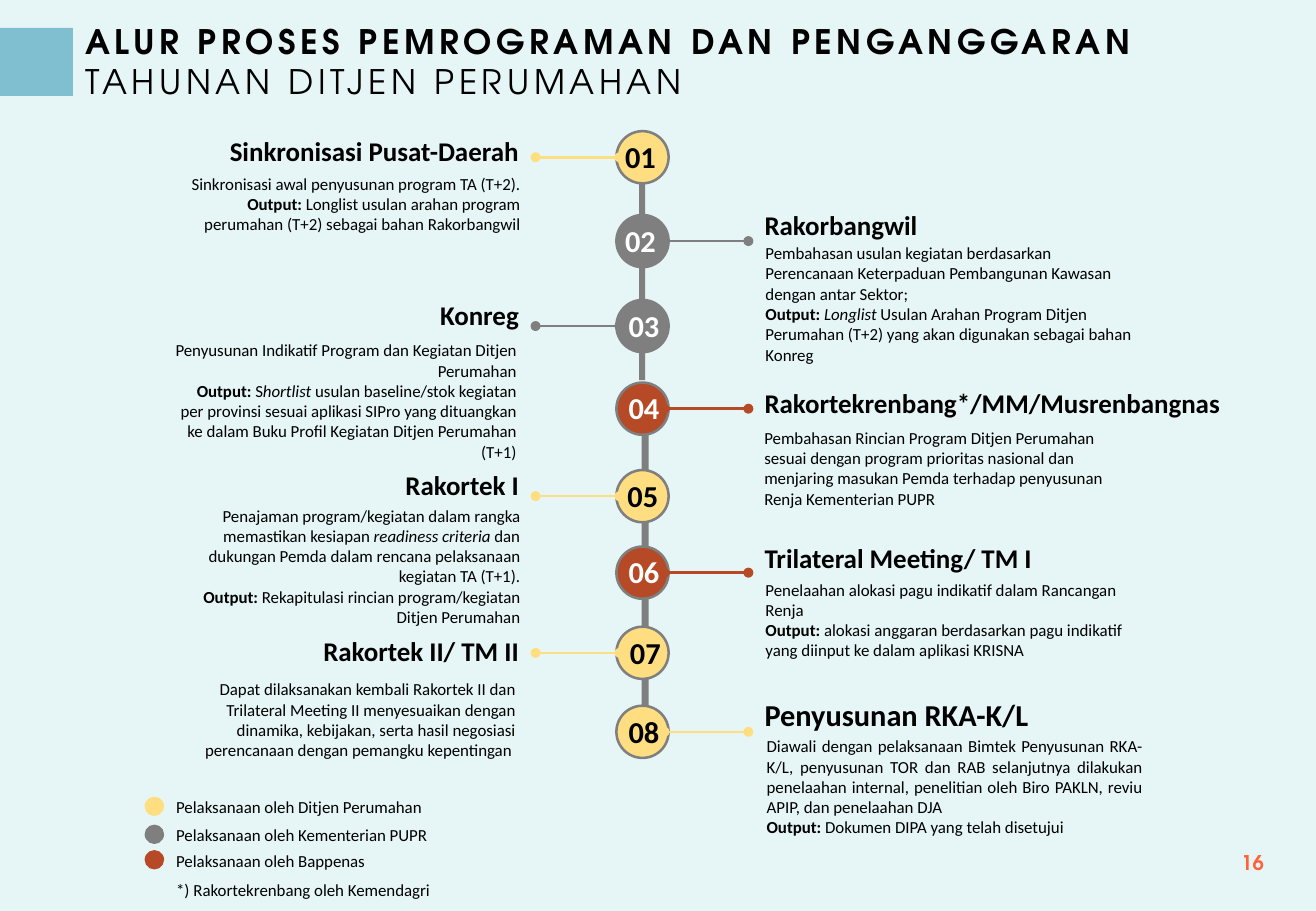
from lxml import etree
from pptx import Presentation
from pptx.dml.color import RGBColor
from pptx.enum.shapes import MSO_CONNECTOR, MSO_SHAPE
from pptx.enum.text import MSO_ANCHOR, MSO_AUTO_SIZE, PP_ALIGN
from pptx.oxml.ns import qn
from pptx.util import Inches, Pt

LEFT, RIGHT, CENTER, JUSTIFY = PP_ALIGN.LEFT, PP_ALIGN.RIGHT, PP_ALIGN.CENTER, PP_ALIGN.JUSTIFY
TOP, MIDDLE, BOTTOM = MSO_ANCHOR.TOP, MSO_ANCHOR.MIDDLE, MSO_ANCHOR.BOTTOM
RECT, OVAL = MSO_SHAPE.RECTANGLE, MSO_SHAPE.OVAL
FIT, NO_FIT = MSO_AUTO_SIZE.SHAPE_TO_FIT_TEXT, MSO_AUTO_SIZE.NONE
STRAIGHT = MSO_CONNECTOR.STRAIGHT

# Content: a paragraph is a list of (text, style) runs, style "b", "i" or ""
YELLOW, GREY, RED = "FFDE81", "7F7F7F", "B64926"
BLACK, WHITE, BLUE, ORANGE, PALE = "000000", "FFFFFF", "80BFD0", "FF6238", "E6F5F6"
BODY_FONT, TITLE_FONT = "Calibri", "TeX Gyre Adventor"
OUTPUT = ("Output: ", "b")

TITLE = [[("ALUR PROSES PEMROGRAMAN DAN PENGANGGARAN ", "b"), ("TAHUNAN DITJEN PERUMAHAN", "")]]
PAGE = "16"

# Steps: heading, heading size, body alignment, colour, body lines, body.
# Odd and last-but-one positions follow the layout table below.
STEPS = [
    ("Sinkronisasi Pusat-Daerah", 16, RIGHT, YELLOW, 3, [
        [("Sinkronisasi awal penyusunan program TA (T+2).", "")],
        [OUTPUT, ("Longlist usulan arahan program perumahan (T+2) sebagai bahan Rakorbangwil", "")]]),
    ("Rakorbangwil", 16, LEFT, GREY, 6, [
        [("Pembahasan usulan kegiatan berdasarkan Perencanaan Keterpaduan Pembangunan "
          "Kawasan dengan antar Sektor;", "")],
        [OUTPUT, ("Longlist", "i"), (" Usulan Arahan Program Ditjen Perumahan (T+2) yang akan "
                                     "digunakan sebagai bahan Konreg", "")]]),
    ("Konreg", 16, RIGHT, GREY, 6, [
        [("Penyusunan Indikatif Program dan Kegiatan Ditjen Perumahan", "")],
        [OUTPUT, ("S", ""), ("hortlist ", "i"),
         ("usulan baseline/stok kegiatan per provinsi sesuai aplikasi SIPro yang dituangkan "
          "ke dalam Buku Profil Kegiatan Ditjen Perumahan (T+1)", "")]]),
    ("Rakortekrenbang*/MM/Musrenbangnas", 16, LEFT, RED, 4, [
        [("Pembahasan Rincian Program Ditjen Perumahan sesuai dengan program prioritas nasional "
          "dan menjaring masukan Pemda terhadap penyusunan Renja Kementerian PUPR", "")]]),
    ("Rakortek I", 16, RIGHT, YELLOW, 6, [
        [("Penajaman program/kegiatan dalam rangka memastikan kesiapan ", ""),
         ("readiness criteria ", "i"),
         ("dan dukungan Pemda dalam rencana pelaksanaan kegiatan TA (T+1).", "")],
        [OUTPUT, ("Rekapitulasi rincian program/kegiatan Ditjen Perumahan", "")]]),
    ("Trilateral Meeting/ TM I", 16, LEFT, RED, 4, [
        [("Penelaahan alokasi pagu indikatif dalam Rancangan Renja", "")],
        [OUTPUT, ("alokasi anggaran berdasarkan pagu indikatif yang diinput ke dalam "
                  "aplikasi KRISNA", "")]]),
    ("Rakortek II/ TM II", 16, RIGHT, YELLOW, 4, [
        [("Dapat dilaksanakan kembali Rakortek II dan Trilateral Meeting II menyesuaikan dengan "
          "dinamika, kebijakan, serta hasil negosiasi perencanaan dengan pemangku "
          "kepentingan ", "")]]),
    ("Penyusunan RKA-K/L", 18, JUSTIFY, YELLOW, 5, [
        [("Diawali dengan pelaksanaan Bimtek Penyusunan RKA-K/L, penyusunan TOR dan RAB "
          "selanjutnya dilakukan penelaahan internal, penelitian oleh Biro PAKLN, reviu APIP, "
          "dan penelaahan DJA", "")],
        [OUTPUT, ("Dokumen DIPA yang telah disetujui", "")]]),
]
LEGEND = [(86.8, "Pelaksanaan oleh Ditjen Perumahan", YELLOW),
          (89.87, "Pelaksanaan oleh Kementerian PUPR", GREY),
          (92.67, "Pelaksanaan oleh Bappenas", RED)]
FOOTNOTE = (95.87, "*) Rakortekrenbang oleh Kemendagri")

# Layout in percent of the slide: tops of circle, heading and body,
# inner edge of the body, left of the number
STEP_PLACES = [
    (14.4, 14, 18.4, 39.52, 46.54), (23.6, 22.13, 26, 58.17, 46.54),
    (32.93, 32, 36.67, 39.24, 46.81), (42, 41.73, 46.27, 58.08, 46.81),
    (51.6, 50.67, 54.8, 39.52, 46.72), (60, 58.67, 62.93, 58.17, 46.81),
    (68.8, 68.93, 73.87, 39.15, 46.91), (77.47, 75.73, 80.13, 58.26, 46.81),
]
SPINE = [(48.75, 46.67, 0.55, 32.4), (48.57, 17.73, 0.46, 24)]
CIRCLE_LEFT, CIRCLE_WIDTH, CIRCLE_HEIGHT = 46.84, 3.97, 5.73
NUMBER_WIDTH, NUMBER_HEIGHT = 4.25, 5.33
LEFT_HEADING_EDGE, RIGHT_HEADING_EDGE, HEADING_WIDTH = 39.43, 58.1, 34.9
LEFT_BODY_WIDTH, RIGHT_BODY_WIDTH = 26.13, 28.53
BODY_MARGIN, BODY_LINE = 1.33, 2.23
LEFT_BRANCH, RIGHT_BRANCH, BRANCH_LENGTH = 40.7, 50.5, 6.37
LEGEND_DOT, LEGEND_TEXT = 10.99, 13.39

prs = Presentation()
prs.slide_width, prs.slide_height = Inches(10.83), Inches(7.5)
slide = prs.slides.add_slide(prs.slide_layouts[5])


def x(share):
    return int(prs.slide_width * share / 100)


def y(share):
    return int(prs.slide_height * share / 100)


def box(left, top, width, height):
    return x(left), y(top), x(width), y(height)


def colour(value):
    return RGBColor.from_string(value)


def write(frame, paragraphs, size, align=LEFT, ink=BLACK, font=BODY_FONT):
    for index, runs in enumerate(paragraphs):
        paragraph = frame.add_paragraph() if index else frame.paragraphs[0]
        paragraph.alignment = align
        for text, style in runs:
            run = paragraph.add_run()
            run.text = text
            run.font.name, run.font.size = font, Pt(size)
            run.font.bold, run.font.italic = style == "b", style == "i"
            run.font.color.rgb = colour(ink)


def add_text(place, paragraphs, size, align=LEFT, anchor=TOP, ink=BLACK, font=BODY_FONT,
             side=0, wrap=True, fit=FIT):
    frame = slide.shapes.add_textbox(*place).text_frame
    frame.word_wrap, frame.auto_size, frame.vertical_anchor = wrap, fit, anchor
    frame.margin_left = frame.margin_right = Inches(side)
    write(frame, paragraphs, size, align, ink, font)


def add_block(kind, place, fill, outline=None):
    block = slide.shapes.add_shape(kind, *place)
    block.shadow.inherit = False
    block.fill.solid()
    block.fill.fore_color.rgb = colour(fill)
    if outline:
        block.line.color.rgb = colour(outline)
        block.line.width = Pt(1.5)
    else:
        block.line.fill.background()


def add_branch(left, level, ink):
    branch = slide.shapes.add_connector(
        STRAIGHT, x(left), y(level), x(left + BRANCH_LENGTH), y(level))
    branch.line.color.rgb = colour(ink)
    branch.line.width = Pt(1.5)
    for end in ("a:headEnd", "a:tailEnd"):
        etree.SubElement(branch.line._get_or_add_ln(), qn(end), type="oval")
    etree.SubElement(branch._element.spPr, qn("a:effectLst"))


# Background, title and page number
slide.background.fill.solid()
slide.background.fill.fore_color.rgb = colour(PALE)
title = slide.shapes.title
title.left, title.top, title.width, title.height = box(5.54, 1.6, 93.35, 10.27)
title.text_frame.vertical_anchor, title.text_frame.auto_size = TOP, NO_FIT
title.text_frame.word_wrap = True
write(title.text_frame, TITLE, 20, font=TITLE_FONT)
for run in title.text_frame.paragraphs[0].runs:
    run._r.get_or_add_rPr().set("spc", "270")
add_block(RECT, box(0, 3.07, 5.54, 7.47), BLUE)
add_text(box(74.42, 92.67, 22.53, 5.33), [[(PAGE, "b")]], 12, RIGHT, ink=ORANGE,
         font=TITLE_FONT, side=0.1, fit=NO_FIT)

# Spine behind the circles
for place in SPINE:
    add_block(RECT, box(*place), GREY)

# Steps: circle, branch, number, heading and body
for number, (step, place) in enumerate(zip(STEPS, STEP_PLACES), 1):
    heading, size, align, ink, lines, body = step
    circle_top, heading_top, body_top, body_left, number_left = place
    heading_left, body_width, branch_left = RIGHT_HEADING_EDGE, RIGHT_BODY_WIDTH, RIGHT_BRANCH
    if align == RIGHT:
        heading_left = LEFT_HEADING_EDGE - HEADING_WIDTH
        body_width, branch_left = LEFT_BODY_WIDTH, LEFT_BRANCH
        body_left -= body_width
    add_block(OVAL, box(CIRCLE_LEFT, circle_top, CIRCLE_WIDTH, CIRCLE_HEIGHT), ink, GREY)
    add_branch(branch_left, circle_top + CIRCLE_HEIGHT / 2, ink)
    add_text(box(number_left, circle_top + 0.1, NUMBER_WIDTH, NUMBER_HEIGHT),
             [[(f"{number:02}", "b")]], 18, CENTER, MIDDLE,
             BLACK if ink == YELLOW else WHITE, side=0.1, wrap=False)
    add_text(box(heading_left, heading_top, HEADING_WIDTH, 4.93 if size == 16 else 5.33),
             [[(heading, "b")]], size, RIGHT if align == RIGHT else LEFT, BOTTOM)
    add_text(box(body_left, body_top, body_width, BODY_MARGIN + BODY_LINE * lines),
             body, 10, align)

# Legend and footnote
for top, label, ink in LEGEND:
    add_block(OVAL, box(LEGEND_DOT, top + 0.65, 1.48, 2.13), ink)
for top, label, *_ in LEGEND + [FOOTNOTE]:
    add_text(box(LEGEND_TEXT, top, 35.64, 3.6), [[(label, "")]], 10)

prs.save("out.pptx")
